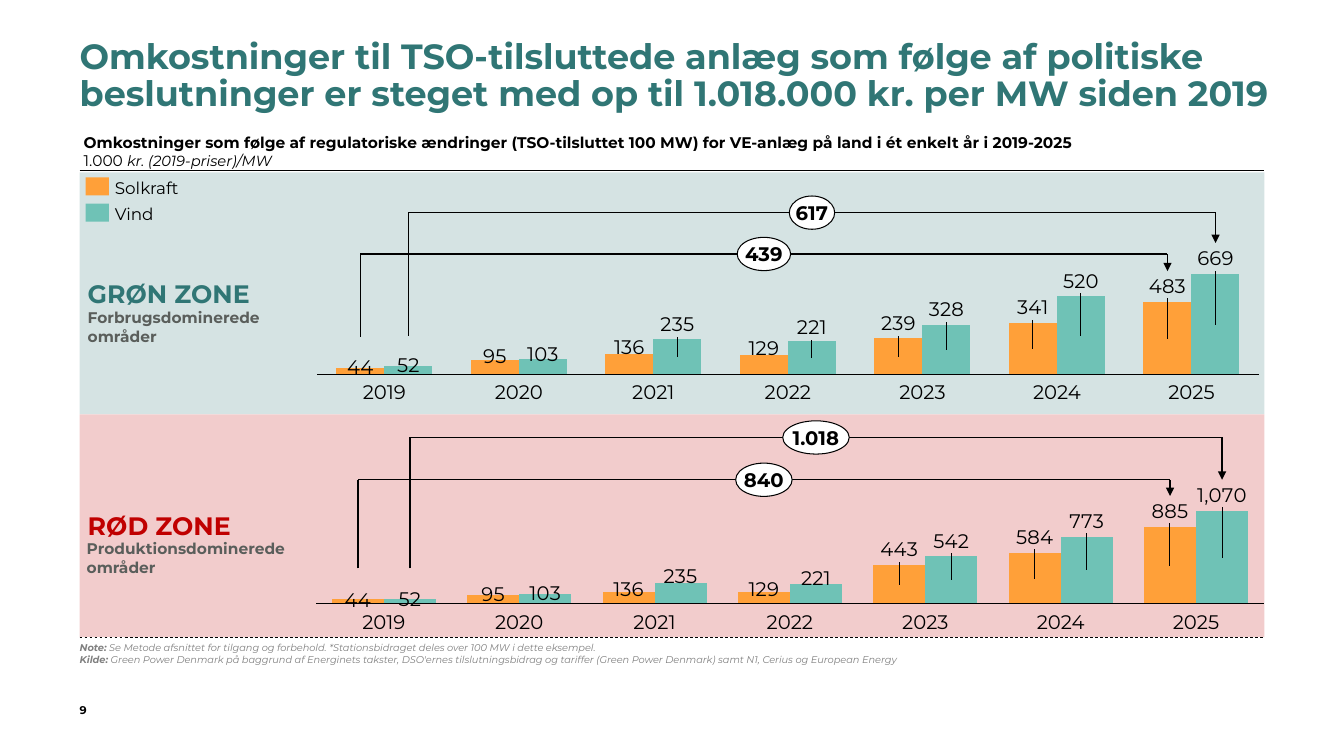
from lxml import etree
from pptx import Presentation
from pptx.chart.data import CategoryChartData
from pptx.dml.color import RGBColor
from pptx.enum.chart import XL_CHART_TYPE, XL_LABEL_POSITION, XL_TICK_LABEL_POSITION, XL_TICK_MARK
from pptx.enum.dml import MSO_LINE
from pptx.enum.shapes import MSO_CONNECTOR, MSO_SHAPE
from pptx.enum.text import MSO_ANCHOR, PP_ALIGN
from pptx.oxml.ns import qn
from pptx.util import Inches, Pt

COLUMNS, LABEL_CENTER = XL_CHART_TYPE.COLUMN_CLUSTERED, XL_LABEL_POSITION.CENTER
NO_LABELS, NO_TICKS = XL_TICK_LABEL_POSITION.NONE, XL_TICK_MARK.NONE
STRAIGHT, DASH = MSO_CONNECTOR.STRAIGHT, MSO_LINE.DASH
RECTANGLE, OVAL = MSO_SHAPE.RECTANGLE, MSO_SHAPE.OVAL
TOP, MIDDLE, BOTTOM = MSO_ANCHOR.TOP, MSO_ANCHOR.MIDDLE, MSO_ANCHOR.BOTTOM
LEFT, CENTER = PP_ALIGN.LEFT, PP_ALIGN.CENTER
FONT = "Montserrat"
COLORS = {"teal": "307675", "red": "C00000", "solar": "FFA039", "wind": "6FC2B6",
          "black": "000000", "white": "FFFFFF", "gray": "808080", "dark": "5A5E5B"}
YEARS = [str(year) for year in range(2019, 2026)]
SERIES = {"Solkraft": "solar", "Vind": "wind"}
GREEN = {
    "name": "GRØN ZONE", "color": "teal", "note": "Forbrugsdominerede områder",
    "note_box": (0.08, 1.35, 2.23, 0.4), "chart_box": (2.27, 0.53, 9.52, 1.81),
    "plot": (0.009, 0.265, 0.981, 0.549), "gap": 80, "maximum": 669,
    "values": [(44, 95, 136, 129, 239, 341, 483), (52, 103, 235, 221, 328, 520, 669)],
    "brackets": [("439", 0.53, 1.63, 0.81, 0.98), ("617", 0.45, 1.62, 0.4, 0.7)]}
RED = {
    "name": "RØD ZONE", "color": "red", "note": "Produktionsdominerede områder",
    "note_box": (0.07, 1.24, 2.44, 0.4), "chart_box": (2.26, 0.48, 9.58, 1.73),
    "plot": (0.009, 0.277, 0.981, 0.53), "gap": 60, "maximum": 1070,
    "values": [(44, 95, 136, 129, 443, 584, 885), (52, 103, 235, 221, 542, 773, 1070)],
    "brackets": [("840", 0.56, 1.53, 0.65, 0.81), ("1.018", 0.66, 1.53, 0.23, 0.65)]}


def rgb(name):
    """Return the named colour."""
    return RGBColor.from_string(COLORS[name])


def write(shape, lines, size, color="black", align=LEFT, anchor=TOP, wrap=True, inset=(0, 0), spacing=None):
    """Fill a shape with one paragraph of lines, each a list of (text, font format) runs."""
    frame = shape.text_frame
    horizontal, vertical = Inches(inset[0]), Inches(inset[1])
    settings = {"word_wrap": wrap, "vertical_anchor": anchor, "margin_left": horizontal,
                "margin_right": horizontal, "margin_top": vertical, "margin_bottom": vertical}
    for key, value in settings.items():
        setattr(frame, key, value)
    paragraph = frame.paragraphs[0]
    paragraph.alignment = align
    paragraph.line_spacing = spacing
    for index, line in enumerate(lines):
        if index:
            paragraph.add_line_break()
        for text, style in line:
            run = paragraph.add_run()
            run.text = text
            for key, value in {"name": FONT, "size": Pt(size), "bold": False, **style}.items():
                setattr(run.font, key, value)
            run.font.color.rgb = rgb(color)


def add_text(slide, box, lines, size, **options):
    """Add a text box."""
    write(slide.shapes.add_textbox(*map(Inches, box)), lines, size, **options)


def add_block(slide, kind, box, fill, outline=None):
    """Add a filled shape, optionally outlined."""
    shape = slide.shapes.add_shape(kind, *map(Inches, box))
    shape.shadow.inherit = False
    shape.fill.solid()
    shape.fill.fore_color.rgb = rgb(fill)
    if outline:
        shape.line.color.rgb = rgb(outline)
        shape.line.width = Pt(0.75)
    else:
        shape.line.fill.background()
    return shape


def add_line(slide, start, end, width=1, dash=None, arrow=False):
    """Add a black straight line, optionally dashed or with an arrowhead."""
    line = slide.shapes.add_connector(STRAIGHT, *map(Inches, start + end))
    line.line.color.rgb = rgb("black")
    line.line.width = Pt(width)
    if dash:
        line.line.dash_style = dash
    if arrow:
        etree.SubElement(line.line._get_or_add_ln(), qn("a:tailEnd"), type="triangle")
    etree.SubElement(line._element.spPr, qn("a:effectLst"))


def make_layout(**values):
    """Build a manual chart layout element."""
    layout = etree.Element(qn("c:layout"))
    manual = etree.SubElement(layout, qn("c:manualLayout"))
    for key, value in values.items():
        etree.SubElement(manual, qn("c:" + key), val=str(value))
    return layout


def add_zone_chart(slide, box, zone):
    """Add the clustered columns of a zone with their raised value labels."""
    data = CategoryChartData(number_format="#,##0")
    data.categories = YEARS
    for name, values in zip(SERIES, zone["values"]):
        data.add_series(name, values)
    chart = slide.shapes.add_chart(COLUMNS, *map(Inches, box), data).chart
    chart.has_legend = chart.has_title = False
    chart.font.name, chart.font.size, chart.font.color.rgb = FONT, Pt(14), rgb("black")
    x, y, w, h = zone["plot"]
    area = chart._chartSpace.chart.plotArea
    for layout in area.findall(qn("c:layout")):
        area.remove(layout)
    area.insert(0, make_layout(layoutTarget="inner", xMode="edge", yMode="edge", x=x, y=y, w=w, h=h))
    axis = chart.category_axis
    axis.tick_label_position, axis.major_tick_mark = NO_LABELS, NO_TICKS
    axis.format.line.color.rgb, axis.format.line.width = rgb("black"), Pt(0.75)
    scale = chart.value_axis
    scale.minimum_scale, scale.maximum_scale = 0, zone["maximum"]
    scale.has_major_gridlines = scale.visible = False
    plot = chart.plots[0]
    plot.gap_width, plot.overlap, plot.vary_by_categories = zone["gap"], 0, False
    for series, color in zip(plot.series, SERIES.values()):
        series.format.fill.solid()
        series.format.fill.fore_color.rgb = rgb(color)
        series.data_labels.show_value = True
        for index, value in enumerate(series.values):
            label = series.points[index].data_label
            label.position = LABEL_CENTER
            label.font.size, label.font.name = Pt(14), FONT
            column = value / zone["maximum"] * h * box[3]
            rise = min(column - 0.035, column / 2 + 0.15)
            element = series.data_labels._element.findall(qn("c:dLbl"))[index]
            element.insert(1, make_layout(x=0, y=round(-rise / box[3], 4)))


def add_bracket(slide, left, right, start, level, end, label, width):
    """Add an arrow bracket from first to last year with its increase in an oval."""
    add_line(slide, (left, start), (left, level))
    add_line(slide, (left, level), (right, level))
    add_line(slide, (right, level), (right, end), arrow=True)
    oval = add_block(slide, OVAL, ((left + right - width) / 2, level - 0.165, width, 0.33), "white", "black")
    write(oval, [[(label, {"bold": True})]], 14, align=CENTER, anchor=MIDDLE, wrap=False)


def add_zone(slide, box, zone):
    """Add one zone band with its name, chart, years and brackets."""
    left, top = box[:2]
    band = add_block(slide, RECTANGLE, box, zone["color"])
    fill = band._element.spPr.find(qn("a:solidFill"))
    etree.SubElement(fill[0], qn("a:alpha"), val="20000")
    write(band, [[(zone["name"], {"bold": True})]], 18, color=zone["color"], anchor=MIDDLE, inset=(0.08, 0.04))
    x, y, w, h = zone["note_box"]
    add_text(slide, (left + x, top + y, w, h), [[(zone["note"], {"bold": True})]], 11, color="dark")
    x, y, w, h = zone["chart_box"]
    chart_box = (left + x, top + y, w, h)
    add_zone_chart(slide, chart_box, zone)
    plot_x, plot_y, plot_w, plot_h = zone["plot"]
    step = plot_w * w / len(YEARS)
    first = chart_box[0] + plot_x * w + step / 2
    baseline = chart_box[1] + (plot_y + plot_h) * h
    for index, year in enumerate(YEARS):
        add_text(slide, (first + index * step - 0.3, baseline + 0.06, 0.6, 0.23), [[(year, {})]], 14,
                 align=CENTER, wrap=False)
    half_column = step / (2 + zone["gap"] / 100) / 2
    for side, (label, width, start, level, end) in zip((-1, 1), zone["brackets"]):
        column = first + side * half_column
        add_bracket(slide, column, column + step * (len(YEARS) - 1),
                    top + start, top + level, top + end, label, width)


def add_legend(slide, box):
    """Add the two series keys."""
    left, top, width, row = box
    for index, (name, color) in enumerate(SERIES.items()):
        y = top + index * row
        add_block(slide, RECTANGLE, (left, y, 0.23, 0.18), color)
        add_text(slide, (left + 0.29, y, width - 0.29, 0.2), [[(name, {})]], 12, anchor=MIDDLE, wrap=False)


def add_header(slide, box):
    """Add the slide title, the chart heading and the rule below."""
    left, top, width, height = box
    title = slide.shapes.title
    for key, value in zip(("left", "top", "width", "height"), (left, top, 11.93, 0.72)):
        setattr(title, key, Inches(value))
    text = ("Omkostninger til TSO-tilsluttede anlæg som følge af politiske beslutninger "
            "er steget med op til 1.018.000 kr. per MW siden 2019")
    write(title, [[(text, {"bold": True})]], 25, color="teal", spacing=0.87)
    heading = ("Omkostninger som følge af regulatoriske ændringer (TSO-tilsluttet 100 MW) "
               "for VE-anlæg på land i ét enkelt år i 2019-2025")
    unit = ("kr. (2019-priser)/MW", {"italic": True, "size": Pt(10.5)})
    add_text(slide, (left - 0.04, top + 0.88, 11.44, 0.39),
             [[(heading, {"bold": True})], [("1.000 ", {}), unit]], 11, inset=(0.08, 0.04))
    add_line(slide, (left, top + height), (left + width, top + height))


def add_footer(slide, box):
    """Add the dashed rule, the notes and the page number."""
    left, top, width, height = box
    add_line(slide, (left, top), (left + width, top), 0.5, DASH)
    notes = {"Note:": " Se Metode afsnittet for tilgang og forbehold. *Stationsbidraget deles over 100 MW i dette eksempel.",
             "Kilde:": " Green Power Denmark på baggrund af Energinets takster, DSO'ernes tilslutningsbidrag "
                       "og tariffer (Green Power Denmark) samt N1, Cerius og European Energy"}
    lines = [[(key, {"bold": True, "italic": True}), (text, {"italic": True})] for key, text in notes.items()]
    add_text(slide, (left, top + 0.05, 10.32, 0.4), lines, 7, color="gray")
    add_text(slide, (left, top + height - 0.2, 0.37, 0.2), [[("9", {"bold": True})]], 8, anchor=BOTTOM)


def main():
    """Build and save the slide."""
    presentation = Presentation()
    presentation.slide_width, presentation.slide_height = Inches(13.33), Inches(7.5)
    slide = presentation.slides.add_slide(presentation.slide_layouts[5])
    add_header(slide, (0.79, 0.4, 11.75, 1.29))
    add_zone(slide, (0.79, 1.71, 11.75, 2.4), GREEN)
    add_zone(slide, (0.79, 4.11, 11.75, 2.21), RED)
    add_legend(slide, (0.85, 1.76, 0.93, 0.26))
    add_footer(slide, (0.79, 6.32, 11.75, 0.79))
    presentation.save("out.pptx")


if __name__ == "__main__":
    main()
